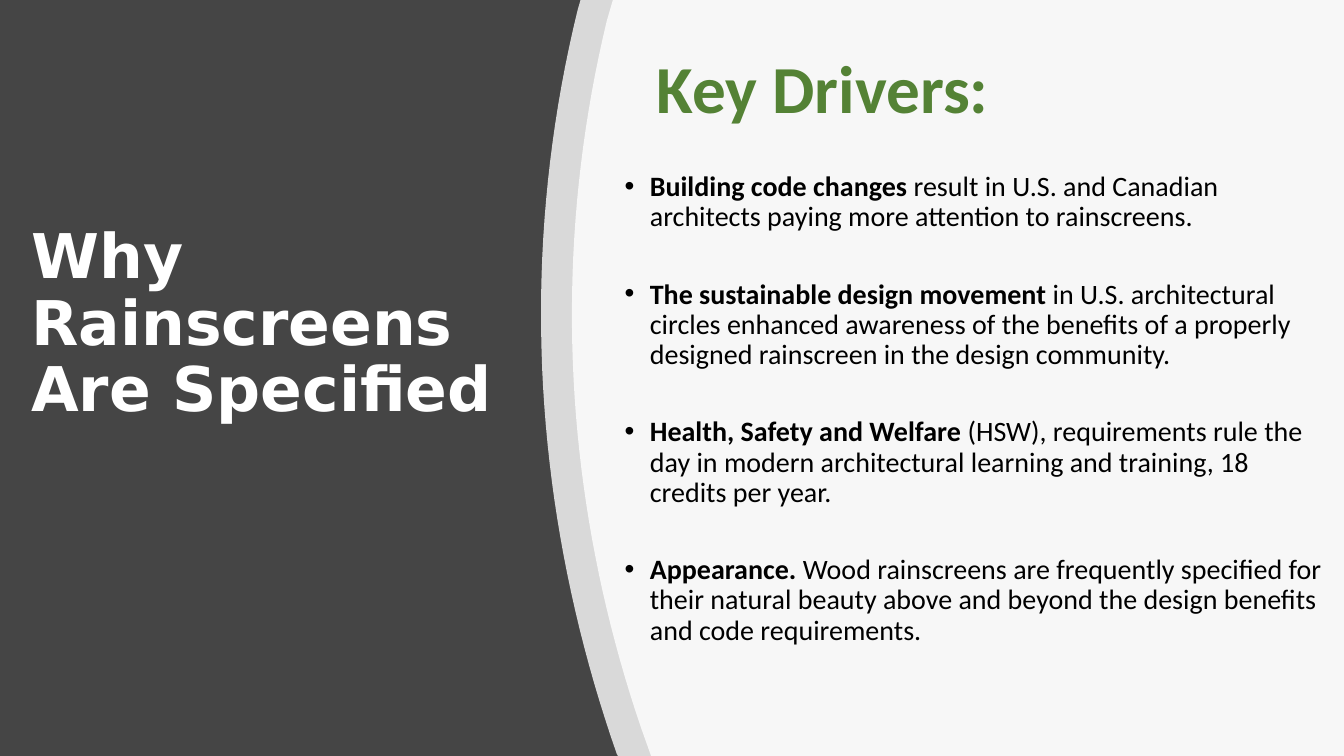
import pptx
import pptx.dml.color
import pptx.enum.text
import pptx.oxml
import pptx.oxml.ns
import pptx.util
from lxml import etree

Pt = pptx.util.Pt
RGBColor = pptx.dml.color.RGBColor
ANCHOR = pptx.enum.text.MSO_ANCHOR
ALIGN = pptx.enum.text.PP_ALIGN
AUTO_SIZE = pptx.enum.text.MSO_AUTO_SIZE
qn = pptx.oxml.ns.qn

CHARCOAL = RGBColor(0x45, 0x45, 0x45)
WHITE = RGBColor(0xFF, 0xFF, 0xFF)
BLACK = RGBColor(0, 0, 0)
GREEN = RGBColor(0x54, 0x82, 0x35)

WIDTH, HEIGHT = 960, 540
CURVE_STEPS = 40

DRIVERS = [
    ("Building code changes",
     " result in U.S. and Canadian architects paying more attention to rainscreens."),
    ("The sustainable design movement",
     " in U.S. architectural circles enhanced awareness of the benefits of a "
     "properly designed rainscreen in the design community."),
    ("Health, Safety and Welfare",
     " (HSW), requirements rule the day in modern architectural learning and "
     "training, 18 credits per year."),
    ("Appearance.",
     " Wood rainscreens are frequently specified for their natural beauty above "
     "and beyond the design benefits and code requirements."),
]


def set_format(target, **values):
    for name, value in values.items():
        setattr(target, name, value)


def place(shape, left, top, width, height):
    set_format(shape, left=Pt(left), top=Pt(top), width=Pt(width), height=Pt(height))


def add_run(paragraph, text, size, color, bold=False, font="Calibri"):
    run = paragraph.add_run()
    run.text = text
    set_format(run.font, name=font, size=Pt(size), bold=bold)
    run.font.color.rgb = color


def curve_points(start, control1, control2, end):
    """Points along a cubic Bezier curve, both ends included."""
    points = []
    for step in range(CURVE_STEPS + 1):
        t = step / CURVE_STEPS
        weights = ((1 - t) ** 3, 3 * t * (1 - t) ** 2, 3 * t * t * (1 - t), t ** 3)
        corners = (start, control1, control2, end)
        points.append(tuple(sum(w * corner[axis] for w, corner in zip(weights, corners))
                            for axis in (0, 1)))
    return points


def add_curved_panel(slide, top_x, bottom_x, curve):
    """Translucent white panel from a curved left edge to the slide's right edge."""
    outline = [(top_x, 0), (WIDTH, 0), (WIDTH, HEIGHT), (bottom_x, HEIGHT)]
    outline += curve_points(*curve)
    corners = [(Pt(x), Pt(y)) for x, y in outline]
    builder = slide.shapes.build_freeform(*corners[0])
    builder.add_line_segments(corners[1:], close=True)
    panel = builder.convert_to_shape()
    panel.shadow.inherit = False
    panel.line.fill.background()
    panel.fill.solid()
    panel.fill.fore_color.rgb = WHITE
    color = panel.fill._xPr.find(f"{qn('a:solidFill')}/{qn('a:srgbClr')}")
    etree.SubElement(color, qn("a:alpha"), val="80000")


def fill_title(title):
    place(title, 15.1, 29.5, 361.5, 406)
    set_format(title.text_frame, vertical_anchor=ANCHOR.MIDDLE, word_wrap=True,
               auto_size=AUTO_SIZE.NONE)
    paragraph = title.text_frame.paragraphs[0]
    set_format(paragraph, alignment=ALIGN.LEFT, line_spacing=0.9, space_after=Pt(6))
    add_run(paragraph, "Why Rainscreens Are Specified", 44, WHITE, True, "DejaVu Sans")


def fill_drivers(body):
    place(body, 421, 73.8, 532, 437)
    frame = body.text_frame
    set_format(frame, vertical_anchor=ANCHOR.MIDDLE, word_wrap=True,
               auto_size=AUTO_SIZE.NONE)
    for index, (driver, explanation) in enumerate(DRIVERS):
        paragraph = frame.add_paragraph() if index else frame.paragraphs[0]
        set_format(paragraph, line_spacing=0.9, space_after=Pt(6),
                   space_before=Pt(27.6 if index else 0))
        properties = paragraph._p.get_or_add_pPr()
        properties.set("marL", str(Pt(36)))
        properties.set("indent", str(Pt(-18)))
        etree.SubElement(properties, qn("a:buFont"), typeface="Arial")
        etree.SubElement(properties, qn("a:buChar"), char="•")
        add_run(paragraph, driver, 20, BLACK, True)
        add_run(paragraph, explanation, 20, BLACK)


def add_heading(slide, text):
    heading = slide.shapes.add_textbox(Pt(462), Pt(29.2), Pt(366.5), Pt(65.5))
    heading.text_frame.word_wrap = True
    add_run(heading.text_frame.paragraphs[0], text, 48, GREEN, True)


def main():
    presentation = pptx.Presentation()
    set_format(presentation, slide_width=Pt(WIDTH), slide_height=Pt(HEIGHT))
    slide = presentation.slides.add_slide(presentation.slide_layouts[1])
    slide.background.fill.solid()
    slide.background.fill.fore_color.rgb = CHARCOAL

    title, body = slide.placeholders
    fill_title(title)
    add_curved_panel(slide, 414.7, 441.4,
                     [(440.6, 538.6), (381.6, 370), (368.6, 187.2), (412.6, 7.2)])
    add_curved_panel(slide, 437.8, 465.1,
                     [(457.9, 519.8), (403.2, 359.3), (392.4, 185.8), (433.4, 15.1)])
    fill_drivers(body)
    slide.shapes._spTree.append(body._element)  # bring the list in front of the panels
    add_heading(slide, "Key Drivers:")
    presentation.save("out.pptx")


if __name__ == "__main__":
    main()
